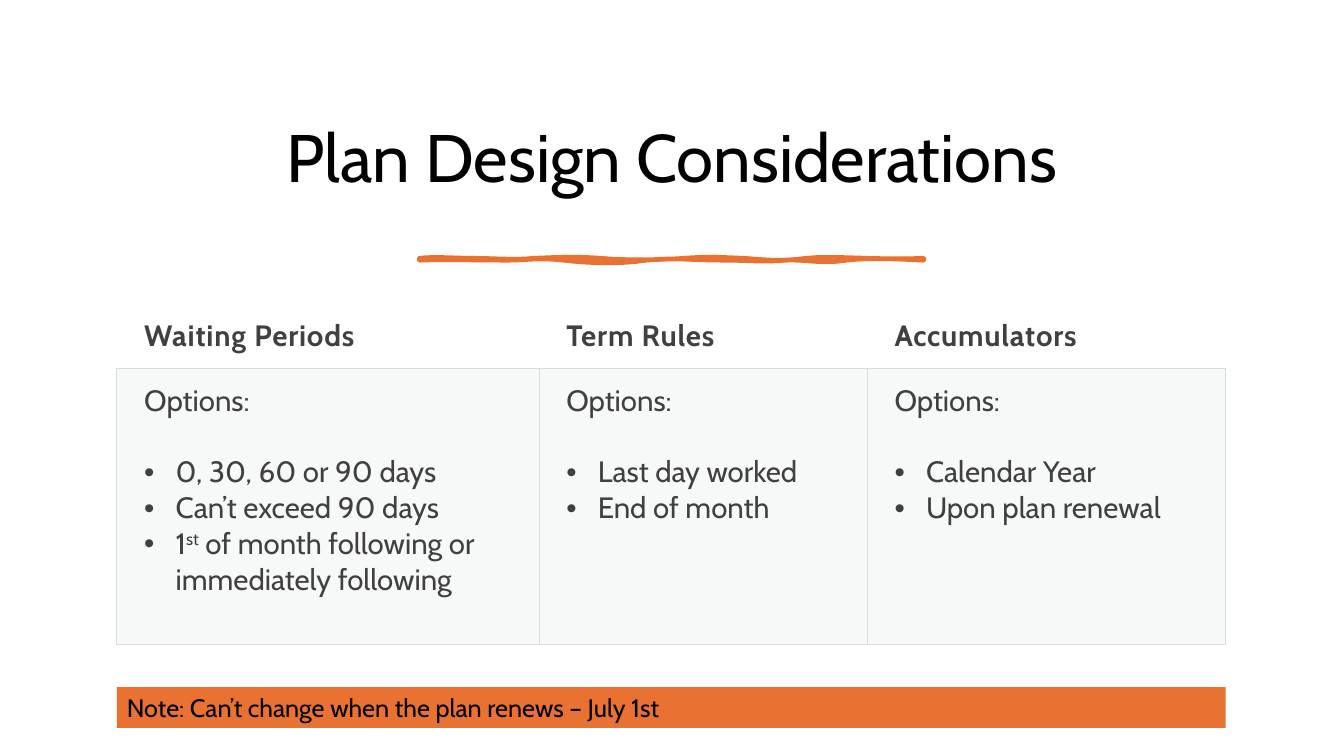
from pptx import Presentation
from pptx.dml.color import RGBColor
from pptx.enum.shapes import MSO_SHAPE
from pptx.enum.text import MSO_ANCHOR, MSO_AUTO_SIZE, PP_ALIGN
from pptx.oxml.ns import qn
from pptx.util import Pt
from lxml.etree import SubElement

TITLE = "Plan Design Considerations"
COLUMNS = [
    ("Waiting Periods", 301.5, [
        ["0, 30, 60 or 90 days"],
        ["Can’t exceed 90 days"],
        ["1", ("st", 30000), " of month following or immediately following"],
    ]),
    ("Term Rules", 234.5, [["Last day worked"], ["End of month"]]),
    ("Accumulators", 256, [["Calendar Year"], ["Upon plan renewal"]]),
]
OPTIONS_LABEL = "Options:"
NOTE = "Note: Can’t change when the plan renews – July 1st"

THEME = {
    "font": "Cabin",
    "title_size": 48, "table_size": 21, "note_size": 18,
    "black": "000000", "text": "404040", "accent": "E97132",
    "cell": "D8DEDC", "cell_alpha": "20000", "border": "D8DCDC",
}
LEFT, WIDTH = 83.5, 792
TITLE_BOX = (50.4, 71.3, 859, 73.4)
TABLE_TOP, ROW_HEIGHTS = 216.2, (47.3, 197)
NOTE_BOX = (LEFT, 490.8, WIDTH, 29.1)
CELL_MARGINS = {"margin_left": Pt(19.5), "margin_right": Pt(23), "margin_top": Pt(10), "margin_bottom": Pt(10)}
BULLET_INDENT = 22.5
OPTIONS_GAP = 25.5
BORDER_WIDTH = 0.75

WAVE_ORIGIN = (299.6, 184.5)
WAVE_STEPS = 8
WAVE_CURVES = [
    ((9, -1.4), (27, 0), (41, 0)),
    ((55, 0), (67, 1.4), (81, 0)),
    ((96, -0.7), (114, -1.4), (130, 0)),
    ((145, 1.4), (171, 1.4), (188, 0)),
    ((206, -1.4), (215, -0.7), (233, 0)),
    ((250, 1.4), (258, 2.2), (276, 0)),
    ((295, -2.2), (325, 1.4), (360, 0)),
    ((361, 0.7), (360, 0.7), (360, 1.4)),
    ((345, 0.7), (323, -0.7), (305, 1.4)),
    ((287, 4.3), (277, 0.7), (261, 1.4)),
    ((245, 2.9), (238, 1.4), (217, 1.4)),
    ((195, 1.4), (181, -0.7), (162, 1.4)),
    ((143, 4.3), (122, 3.6), (103, 1.4)),
    ((85, -0.7), (77, 1.4), (63, 1.4)),
    ((48, 1.4), (16, 0.7), (0, 1.4)),
]


def color(name):
    return RGBColor.from_string(THEME[name])


def apply_format(target, values):
    for name, value in values.items():
        setattr(target, name, value)


def box(values):
    return dict(zip(("left", "top", "width", "height"), map(Pt, values)))


def add_run(paragraph, text, size, color_name, bold=False):
    run = paragraph.add_run()
    run.text = text
    apply_format(run.font, {"name": THEME["font"], "size": Pt(THEME[size]), "bold": bold})
    run.font.color.rgb = color(color_name)
    return run


def add_title(slide):
    title = slide.shapes.title
    apply_format(title, box(TITLE_BOX))
    apply_format(title.text_frame, {
        "vertical_anchor": MSO_ANCHOR.BOTTOM, "word_wrap": True, "auto_size": MSO_AUTO_SIZE.NONE,
    })
    paragraph = title.text_frame.paragraphs[0]
    apply_format(paragraph, {"alignment": PP_ALIGN.CENTER, "line_spacing": 0.9})
    add_run(paragraph, TITLE, "title_size", "black")


def wave_points():
    start = (0, 0)
    for first, second, end in WAVE_CURVES:
        for step in range(1, WAVE_STEPS + 1):
            t = step / WAVE_STEPS
            weights = ((1 - t) ** 3, 3 * t * (1 - t) ** 2, 3 * t ** 2 * (1 - t), t ** 3)
            yield tuple(
                Pt(origin + sum(w * p for w, p in zip(weights, axis)))
                for origin, axis in zip(WAVE_ORIGIN, zip(start, first, second, end))
            )
        start = end


def add_wave(slide):
    builder = slide.shapes.build_freeform(*map(Pt, WAVE_ORIGIN))
    builder.add_line_segments(list(wave_points()), close=True)
    wave = builder.convert_to_shape()
    wave.shadow.inherit = False
    wave.fill.solid()
    wave.fill.fore_color.rgb = color("accent")
    wave.line.color.rgb = color("accent")
    wave.line.width = Pt(3.25)


def set_borders(cell, visible_sides):
    properties = cell._tc.get_or_add_tcPr()
    for side in "LRTB":
        line = SubElement(properties, qn(f"a:ln{side}"), w=str(Pt(BORDER_WIDTH)))
        if side in visible_sides:
            fill = SubElement(line, qn("a:solidFill"))
            SubElement(fill, qn("a:srgbClr"), val=THEME["border"])
        else:
            SubElement(line, qn("a:noFill"))


def fill_header(cell, heading):
    apply_format(cell, {**CELL_MARGINS, "vertical_anchor": MSO_ANCHOR.MIDDLE})
    set_borders(cell, "B")
    cell.fill.background()
    run = add_run(cell.text_frame.paragraphs[0], heading, "table_size", "text", True)
    run._r.get_or_add_rPr().set("spc", "60")


def add_bullet(text_frame, parts):
    paragraph = text_frame.add_paragraph()
    properties = paragraph._p.get_or_add_pPr()
    properties.set("marL", str(Pt(BULLET_INDENT)))
    properties.set("indent", str(-Pt(BULLET_INDENT)))
    SubElement(properties, qn("a:buFont"), typeface="Arial")
    SubElement(properties, qn("a:buChar"), char="•")
    for part in parts:
        text, baseline = part if isinstance(part, tuple) else (part, 0)
        run = add_run(paragraph, text, "table_size", "text")
        if baseline:
            run._r.get_or_add_rPr().set("baseline", str(baseline))


def fill_options(cell, options):
    apply_format(cell, {**CELL_MARGINS, "vertical_anchor": MSO_ANCHOR.TOP})
    set_borders(cell, "LRTB")
    cell.fill.solid()
    cell.fill.fore_color.rgb = color("cell")
    fill_color = cell._tc.tcPr.find(qn("a:solidFill")).find(qn("a:srgbClr"))
    SubElement(fill_color, qn("a:alpha"), val=THEME["cell_alpha"])
    label = cell.text_frame.paragraphs[0]
    label.space_after = Pt(OPTIONS_GAP)
    add_run(label, OPTIONS_LABEL, "table_size", "text")
    for parts in options:
        add_bullet(cell.text_frame, parts)


def add_options_table(slide):
    bounds = box((LEFT, TABLE_TOP, WIDTH, sum(ROW_HEIGHTS)))
    table = slide.shapes.add_table(len(ROW_HEIGHTS), len(COLUMNS), **bounds).table
    apply_format(table, {"first_row": False, "horz_banding": False})
    for row, height in zip(table.rows, ROW_HEIGHTS):
        row.height = Pt(height)
    for index, (heading, width, options) in enumerate(COLUMNS):
        table.columns[index].width = Pt(width)
        fill_header(table.cell(0, index), heading)
        fill_options(table.cell(1, index), options)


def add_note(slide):
    note = slide.shapes.add_shape(MSO_SHAPE.RECTANGLE, **box(NOTE_BOX))
    note.shadow.inherit = False
    note.fill.solid()
    note.fill.fore_color.rgb = color("accent")
    note.line.fill.background()
    apply_format(note.text_frame, {
        "word_wrap": True, "vertical_anchor": MSO_ANCHOR.TOP, "auto_size": MSO_AUTO_SIZE.SHAPE_TO_FIT_TEXT,
    })
    paragraph = note.text_frame.paragraphs[0]
    paragraph.alignment = PP_ALIGN.LEFT
    add_run(paragraph, NOTE, "note_size", "black")


def main():
    presentation = Presentation()
    apply_format(presentation, {"slide_width": Pt(960), "slide_height": Pt(540)})
    slide = presentation.slides.add_slide(presentation.slide_layouts[5])
    add_title(slide)
    add_wave(slide)
    add_options_table(slide)
    add_note(slide)
    presentation.save("out.pptx")


if __name__ == "__main__":
    main()
